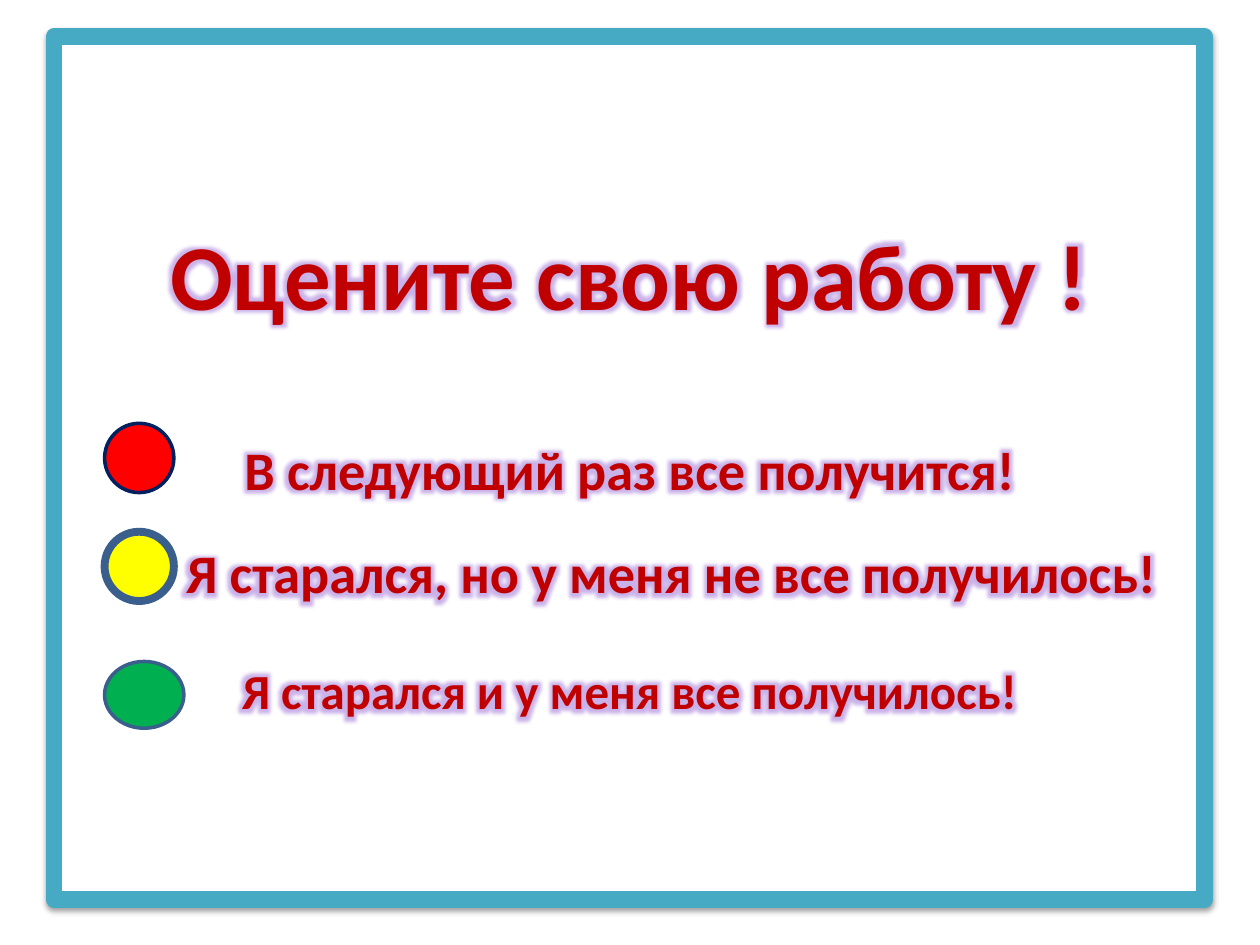
from dataclasses import dataclass

from lxml import etree
from pptx import Presentation
from pptx.dml.color import RGBColor
from pptx.enum.shapes import MSO_SHAPE
from pptx.enum.text import MSO_ANCHOR, PP_ALIGN
from pptx.oxml import parse_xml
from pptx.oxml.ns import qn
from pptx.util import Inches, Pt

RECTANGLE, OVAL = MSO_SHAPE.RECTANGLE, MSO_SHAPE.OVAL
TOP, CENTER = MSO_ANCHOR.TOP, PP_ALIGN.CENTER
NAMESPACE = 'xmlns:a="http://schemas.openxmlformats.org/drawingml/2006/main"'
EMU_PER_POINT = 12700


@dataclass(frozen=True)
class Theme:
    font: str = "Calibri"
    text: str = "C00000"
    glow: str = "7A3FC8"
    paper: str = "FFFFFF"
    frame: str = "46AAC5"
    black: str = "000000"
    navy: str = "002060"
    blue: str = "3A5F8C"
    red: str = "FF0000"
    yellow: str = "FFFF00"
    green: str = "00B050"
    title_size: int = 53
    answer_size: int = 31
    last_size: int = 28


THEME = Theme()


@dataclass(frozen=True)
class TextLine:
    text: str
    size: int
    outline: str
    space_before: int = 0
    indent: float = 0


@dataclass(frozen=True)
class Signal:
    top: float
    width: float
    height: float
    fill: str
    line: str
    line_width: float


LINES = (
    TextLine("Оцените свою работу !", THEME.title_size, THEME.paper),
    TextLine("В следующий раз все получится!", THEME.answer_size, THEME.black, 61),
    TextLine("Я старался, но у меня не все получилось!", THEME.answer_size,
             THEME.black, 22, 0.66),
    TextLine("Я старался и у меня все получилось!", THEME.last_size, THEME.black, 32),
)
SIGNAL_LEFT = 0.83
SIGNALS = (
    Signal(3.36, 0.55, 0.55, THEME.red, THEME.navy, 2),
    Signal(4.22, 0.55, 0.55, THEME.yellow, THEME.blue, 4.5),
    Signal(5.25, 0.63, 0.53, THEME.green, THEME.blue, 2),
)


def add_outlined_shape(slide, kind, left: float, top: float, width: float,
                       height: float, fill: str, line: str, line_width: float):
    shape = slide.shapes.add_shape(kind, Inches(left), Inches(top),
                                   Inches(width), Inches(height))
    shape.shadow.inherit = False
    shape.fill.solid()
    shape.fill.fore_color.rgb = RGBColor.from_string(fill)
    shape.line.color.rgb = RGBColor.from_string(line)
    shape.line.width = Pt(line_width)
    return shape


def add_frame_effects(frame) -> None:
    """Round the corners of the border and cast a soft shadow below it."""
    properties = frame._element.spPr
    etree.SubElement(properties.find(qn("a:ln")), qn("a:round"))
    properties.find(qn("a:effectLst")).append(parse_xml(
        f'<a:outerShdw {NAMESPACE} blurRad="{int(3.1 * EMU_PER_POINT)}" '
        f'dist="{int(1.6 * EMU_PER_POINT)}" dir="5400000" rotWithShape="0">'
        f'<a:srgbClr val="{THEME.black}"><a:alpha val="38000"/></a:srgbClr>'
        '</a:outerShdw>'))


def add_text_effects(span, outline: str) -> None:
    """Give a run a thin outline and a glow."""
    properties = span._r.get_or_add_rPr()
    properties.insert(0, parse_xml(
        f'<a:ln {NAMESPACE} w="{int(0.75 * EMU_PER_POINT)}"><a:solidFill>'
        f'<a:srgbClr val="{outline}"/></a:solidFill></a:ln>'))
    properties.find(qn("a:solidFill")).addnext(parse_xml(
        f'<a:effectLst {NAMESPACE}><a:glow rad="{8 * EMU_PER_POINT}">'
        f'<a:srgbClr val="{THEME.glow}"><a:alpha val="40000"/></a:srgbClr>'
        '</a:glow></a:effectLst>'))


def write_line(para, line: TextLine) -> None:
    para.text = line.text
    para.alignment = CENTER
    para.space_before = Pt(line.space_before)
    if line.indent:
        para._p.get_or_add_pPr().set("marL", str(Inches(line.indent)))
    span = para.runs[0]
    span.font.name = THEME.font
    span.font.size = Pt(line.size)
    span.font.bold = True
    span.font.color.rgb = RGBColor.from_string(THEME.text)
    add_text_effects(span, line.outline)


def main() -> None:
    deck = Presentation()
    deck.slide_width, deck.slide_height = Inches(10), Inches(7.5)
    slide = deck.slides.add_slide(deck.slide_layouts[6])

    frame = add_outlined_shape(slide, RECTANGLE, 0.43, 0.29, 9.13, 6.85,
                               THEME.paper, THEME.frame, 9.5)
    add_frame_effects(frame)
    body = frame.text_frame
    body.word_wrap = True
    body.vertical_anchor = TOP
    body.margin_top = Inches(1.44)
    for index, line in enumerate(LINES):
        write_line(body.add_paragraph() if index else body.paragraphs[0], line)

    for signal in SIGNALS:
        add_outlined_shape(slide, OVAL, SIGNAL_LEFT, signal.top, signal.width,
                           signal.height, signal.fill, signal.line, signal.line_width)
    deck.save("out.pptx")


if __name__ == "__main__":
    main()
